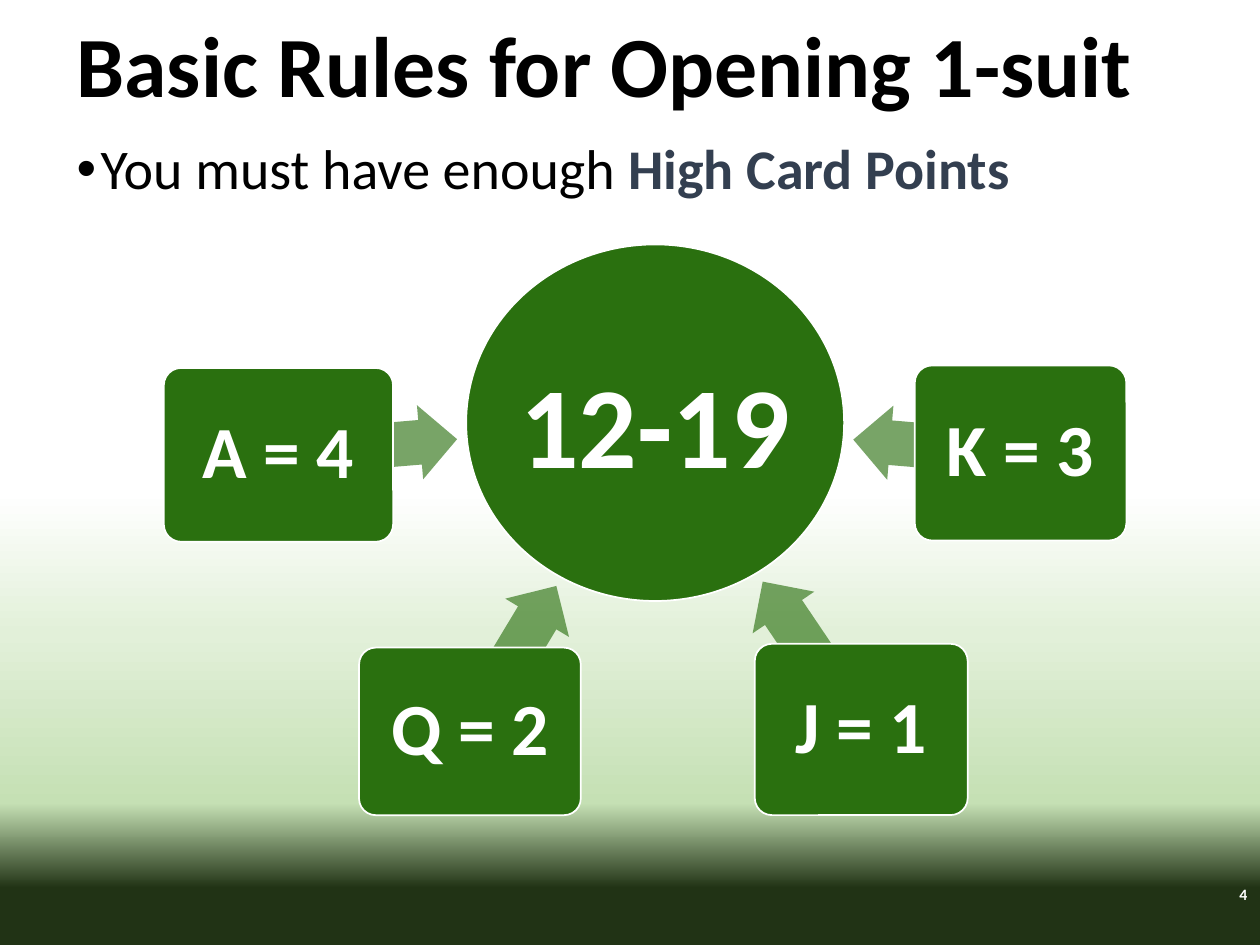
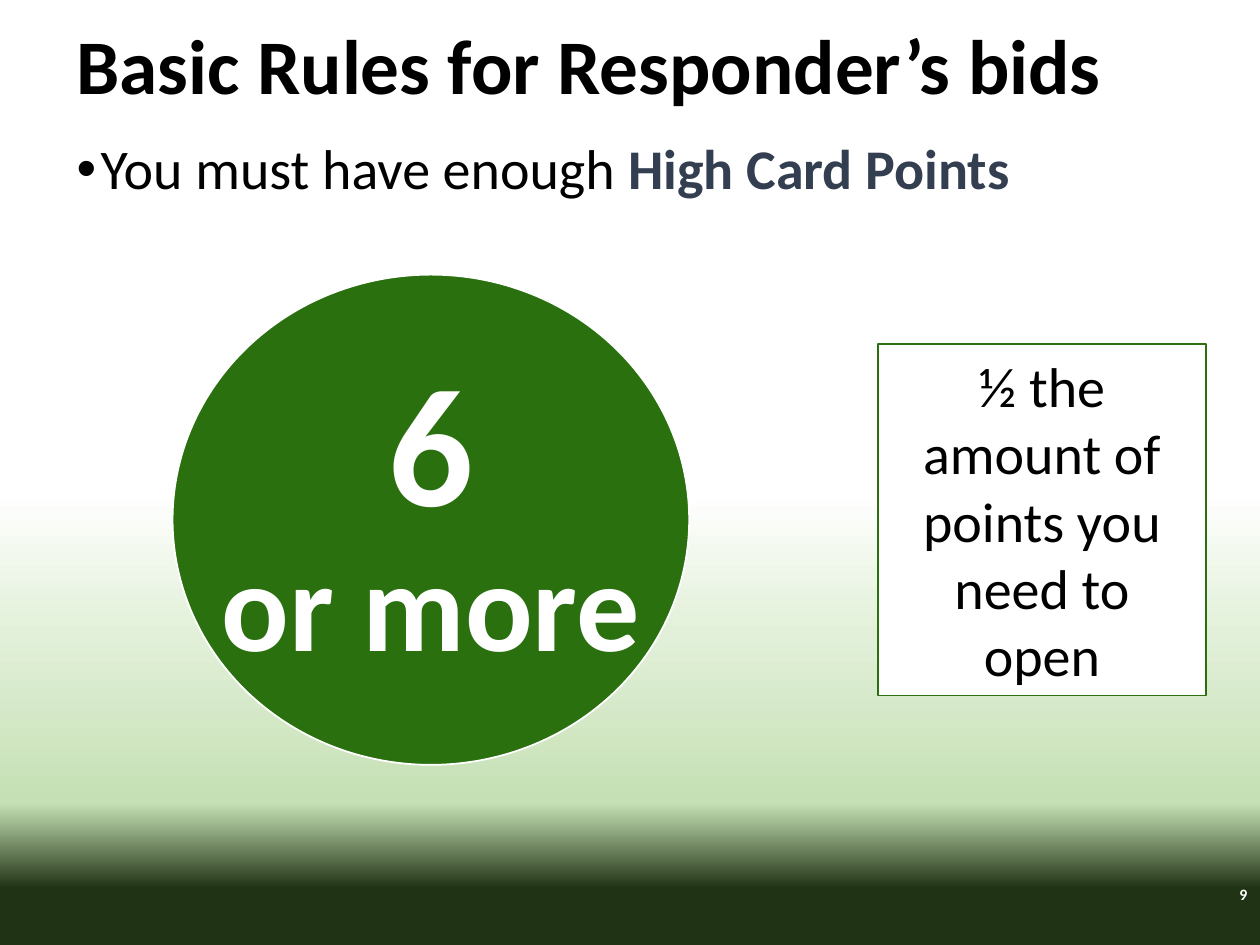
from lxml import etree
from pptx import Presentation
from pptx.dml.color import RGBColor
from pptx.enum.shapes import MSO_SHAPE as Shape
from pptx.enum.text import MSO_ANCHOR as Anchor, PP_ALIGN as Align
from pptx.oxml.ns import qn
from pptx.util import Inches, Pt

GREEN = RGBColor(0x2A, 0x70, 0x0F)
WHITE = RGBColor(0xFF, 0xFF, 0xFF)
BLACK = RGBColor(0x00, 0x00, 0x00)
SLATE = RGBColor(0x33, 0x3F, 0x50)
MINT = RGBColor(0xE2, 0xF0, 0xD9)
LEAF = RGBColor(0xC5, 0xE0, 0xB4)
FOREST = RGBColor(0x21, 0x33, 0x15)

BACKDROP = [(52, WHITE), (67, MINT), (85, LEAF), (94, FOREST)]
PAGES = [("Basic Rules for Opening 1-suit", 49, "4"),
         ("Basic Rules for Responder’s bids", 44.1, "9")]


def write(holder, lines, color, align=Align.CENTER, spacing=0.9, inset=None, **frame_format):
    frame = holder.text_frame
    values = {"word_wrap": True, "vertical_anchor": Anchor.MIDDLE, **frame_format}
    if inset is not None:
        for side in ("left", "top", "right", "bottom"):
            values[f"margin_{side}"] = Inches(inset)
    for name, value in values.items():
        setattr(frame, name, value)
    for index, (text, size, bold) in enumerate(lines):
        paragraph = frame.add_paragraph() if index else frame.paragraphs[0]
        paragraph.alignment = align
        paragraph.line_spacing = spacing
        run = paragraph.add_run()
        run.text = text
        for name, value in {"name": "Calibri", "size": Pt(size), "bold": bold}.items():
            setattr(run.font, name, value)
        run.font.color.rgb = color
    return frame.paragraphs[0]


def draw(slide, kind, box, fill=GREEN, line=WHITE):
    shape = slide.shapes.add_shape(kind, *map(Inches, box))
    shape.shadow.inherit = False
    shape.fill.solid()
    shape.fill.fore_color.rgb = fill
    if line is None:
        shape.line.fill.background()
    else:
        shape.line.color.rgb = line
        shape.line.width = Pt(1)
    return shape


deck = Presentation()
deck.slide_width, deck.slide_height = Inches(10), Inches(7.5)

slides = []
for title, title_size, number in PAGES:
    slide = deck.slides.add_slide(deck.slide_layouts[6])
    slides.append(slide)

    backdrop = slide.background.fill
    backdrop.gradient()
    backdrop.gradient_angle = 270
    stops = next(slide.element.iter(qn("a:gsLst")))
    stops.clear()
    for position, color in BACKDROP:
        stop = etree.SubElement(stops, qn("a:gs"), pos=str(position * 1000))
        etree.SubElement(stop, qn("a:srgbClr"), val=str(color))

    number_box = slide.shapes.add_textbox(*map(Inches, (7.72, 6.9, 2.25, 0.4)))
    write(number_box, [(number, 9, True)], WHITE, Align.RIGHT, 1, 0.07)

    title_box = slide.shapes.add_textbox(*map(Inches, (0.51, 0.13, 9, 0.85)))
    write(title_box, [(title, title_size, True)], BLACK, Align.LEFT)

    rule_box = slide.shapes.add_textbox(*map(Inches, (0.51, 1.07, 9, 0.92)))
    rule = write(rule_box, [("You must have enough ", 32, False)], BLACK, Align.LEFT,
                 vertical_anchor=Anchor.TOP)
    rule_format = rule._p.get_or_add_pPr()
    rule_format.set("marL", str(Inches(0.19)))
    rule_format.set("indent", str(-Inches(0.19)))
    etree.SubElement(rule_format, qn("a:buFont"), typeface="Arial")
    etree.SubElement(rule_format, qn("a:buChar"), char="•")
    emphasis = rule.add_run()
    emphasis.text = "High Card Points"
    for name, value in {"name": "Calibri", "size": Pt(32), "bold": True}.items():
        setattr(emphasis.font, name, value)
    emphasis.font.color.rgb = SLATE

opening, response = slides

opening_points = draw(opening, Shape.OVAL, (3.7, 1.94, 3, 2.83))
write(opening_points, [("12-19", 66, True)], WHITE, spacing=1, inset=0.05, word_wrap=False)

HONOURS = [
    ("Q = 2", (2.85, 5.14, 1.76, 1.33), (3.4, 4.93, 1.34, 0.59), 121),
    ("A = 4", (1.3, 2.92, 1.82, 1.38), (2.21, 3.25, 1.42, 0.59), 175.2),
    ("K = 3", (7.26, 2.9, 1.68, 1.39), (6.77, 3.25, 1.33, 0.59), 4.8),
    ("J = 1", (5.99, 5.11, 1.69, 1.36), (5.74, 4.91, 1.42, 0.59), 56),
]
for honour, card_box, arrow_box, angle in HONOURS:
    arrow = draw(opening, Shape.LEFT_ARROW, arrow_box, line=None)
    arrow.adjustments[0], arrow.adjustments[1] = 0.6, 0.5
    arrow.rotation = angle
    tint = next(arrow.element.spPr.iter(qn("a:srgbClr")))
    etree.SubElement(tint, qn("a:alpha"), val="63000")

    card = draw(opening, Shape.ROUNDED_RECTANGLE, card_box)
    card.adjustments[0] = 0.1
    write(card, [(honour, 42, True)], WHITE, inset=0.09, word_wrap=False)

response_points = draw(response, Shape.OVAL, (1.37, 2.18, 4.1, 3.89))
write(response_points, [("6", 96, True), ("or more", 72, True)], WHITE,
      inset=0.07, word_wrap=False)

reason = draw(response, Shape.RECTANGLE, (6.97, 2.73, 2.6, 2.79), WHITE, GREEN)
write(reason, [("½ the amount of points you need to open", 32, False)], BLACK, spacing=1)

deck.save("out.pptx")
